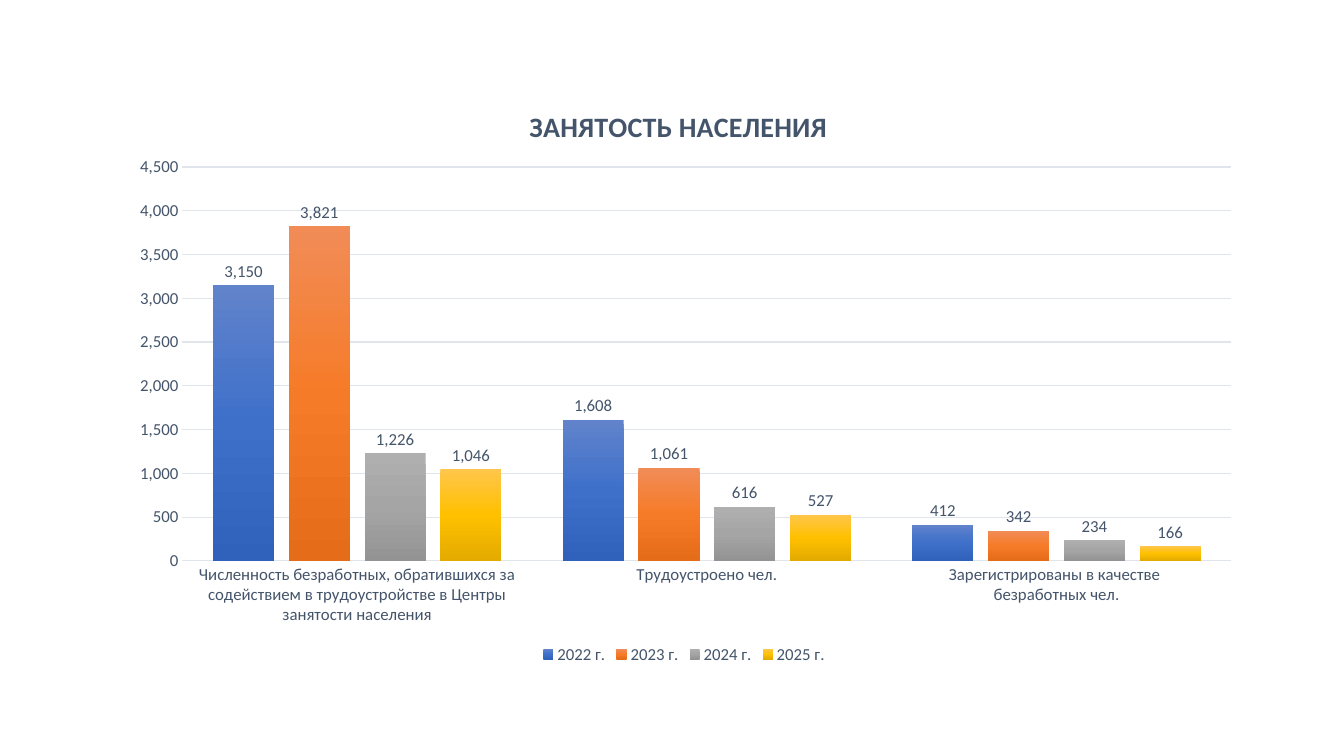
import copy

import pptx
import pptx.chart.data
import pptx.dml.color
import pptx.enum.chart
import pptx.oxml
import pptx.oxml.ns
import pptx.util

PX = 9144  # 100 px to the inch
FONT = "Calibri"
SLATE = "44546A"
PALE = "E0E5EB"


def color(hex_text):
    return pptx.dml.color.RGBColor.from_string(hex_text)


def place(element, position, target=None, **fractions):
    """Give a chart part a manual layout, in fractions of the chart."""
    for old in element.findall(pptx.oxml.ns.qn("c:layout")):
        element.remove(old)
    inner = f'<c:layoutTarget val="{target}"/>' if target else ""
    modes = "".join(f'<c:{name}Mode val="edge"/>' for name in "xy")
    values = "".join(f'<c:{name} val="{value}"/>' for name, value in fractions.items())
    element.insert(position, pptx.oxml.parse_xml(
        f'<c:layout {pptx.oxml.ns.nsdecls("c")}><c:manualLayout>'
        f'{inner}{modes}{values}</c:manualLayout></c:layout>'))


presentation = pptx.Presentation()
presentation.slide_width = 1333 * PX
presentation.slide_height = 750 * PX
slide = presentation.slides.add_slide(presentation.slide_layouts[6])

# Employment figures and the gradient of each year, top to bottom
years = [
    ("2022 г.", (3150, 1608, 412), ("6183CB", "3E70CA", "3062BB")),
    ("2023 г.", (3821, 1061, 342), ("F18C57", "F67B28", "E56C19")),
    ("2024 г.", (1226, 616, 234), ("AFAFAF", "A5A5A5", "939393")),
    ("2025 г.", (1046, 527, 166), ("FFC64B", "FFC000", "E3AB00")),
]
chart_data = pptx.chart.data.CategoryChartData(number_format="#,##0")
chart_data.categories = [
    "Численность безработных, обратившихся за содействием в трудоустройстве в Центры занятости населения",
    "Трудоустроено чел.",
    "Зарегистрированы в качестве \nбезработных чел.",
]
for name, values, _ in years:
    chart_data.add_series(name, values)

chart = slide.shapes.add_chart(
    pptx.enum.chart.XL_CHART_TYPE.COLUMN_CLUSTERED,
    113 * PX, 71 * PX, 1131 * PX, 592 * PX, chart_data).chart
chart.font.name = FONT
chart.font.size = pptx.util.Pt(12)
chart.font.color.rgb = color(SLATE)

# Title
chart.has_title = True
title = chart.chart_title
title.text_frame.text = "ЗАНЯТОСТЬ НАСЕЛЕНИЯ"
title_font = title.text_frame.paragraphs[0].runs[0].font
title_font.name = FONT
title_font.size = pptx.util.Pt(20)
title_font.bold = True
title_font.color.rgb = color(SLATE)
title.include_in_layout = False
place(title._element, 1, x=0.36, y=0.05)

# Legend
chart.has_legend = True
chart.legend.position = pptx.enum.chart.XL_LEGEND_POSITION.BOTTOM
chart.legend.include_in_layout = False

# Axes
category_axis, value_axis = chart.category_axis, chart.value_axis
for axis in (category_axis, value_axis):
    axis.major_tick_mark = pptx.enum.chart.XL_TICK_MARK.NONE
    axis.minor_tick_mark = pptx.enum.chart.XL_TICK_MARK.NONE
value_axis.minimum_scale = 0
value_axis.maximum_scale = 4500
value_axis.major_unit = 500
value_axis.tick_labels.number_format = "#,##0"
value_axis.tick_labels.number_format_is_linked = False
value_axis.format.line.fill.background()
for line in (category_axis.format.line, value_axis.major_gridlines.format.line):
    line.color.rgb = color(PALE)
    line.width = pptx.util.Pt(0.75)

# Columns with value labels
plot = chart.plots[0]
plot.vary_by_categories = False
plot.gap_width = 100
plot.overlap = -24
place(chart.element.find(".//" + pptx.oxml.ns.qn("c:plotArea")), 0, "inner",
      x=0.06, y=0.16, w=0.92, h=0.66)
for series, (_, _, shades) in zip(plot.series, years):
    fill = series.format.fill
    fill.gradient()
    fill.gradient_angle = 270
    stop_list = series._element.find(".//" + pptx.oxml.ns.qn("a:gsLst"))
    stop_list.insert(1, copy.deepcopy(stop_list[0]))
    for stop, shade, position in zip(fill.gradient_stops, shades, (0, 0.5, 1)):
        stop.color.rgb = color(shade)
        stop.position = position
    labels = series.data_labels
    labels.show_value = True
    labels.position = pptx.enum.chart.XL_LABEL_POSITION.OUTSIDE_END
    labels.number_format = "#,##0"
    labels.number_format_is_linked = False
    labels.font.name = FONT
    labels.font.size = pptx.util.Pt(12)
    labels.font.color.rgb = color(SLATE)

presentation.save("out.pptx")
